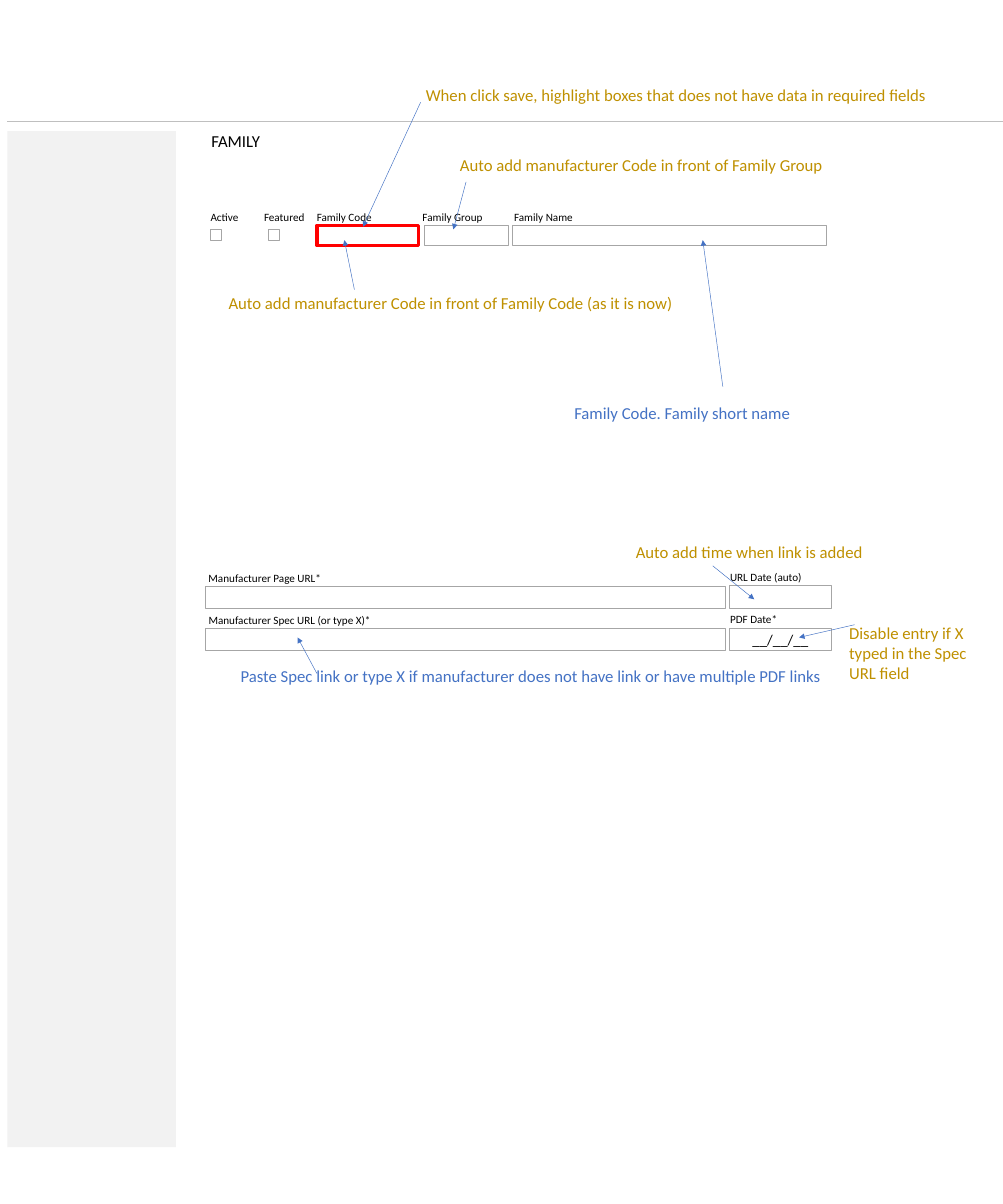
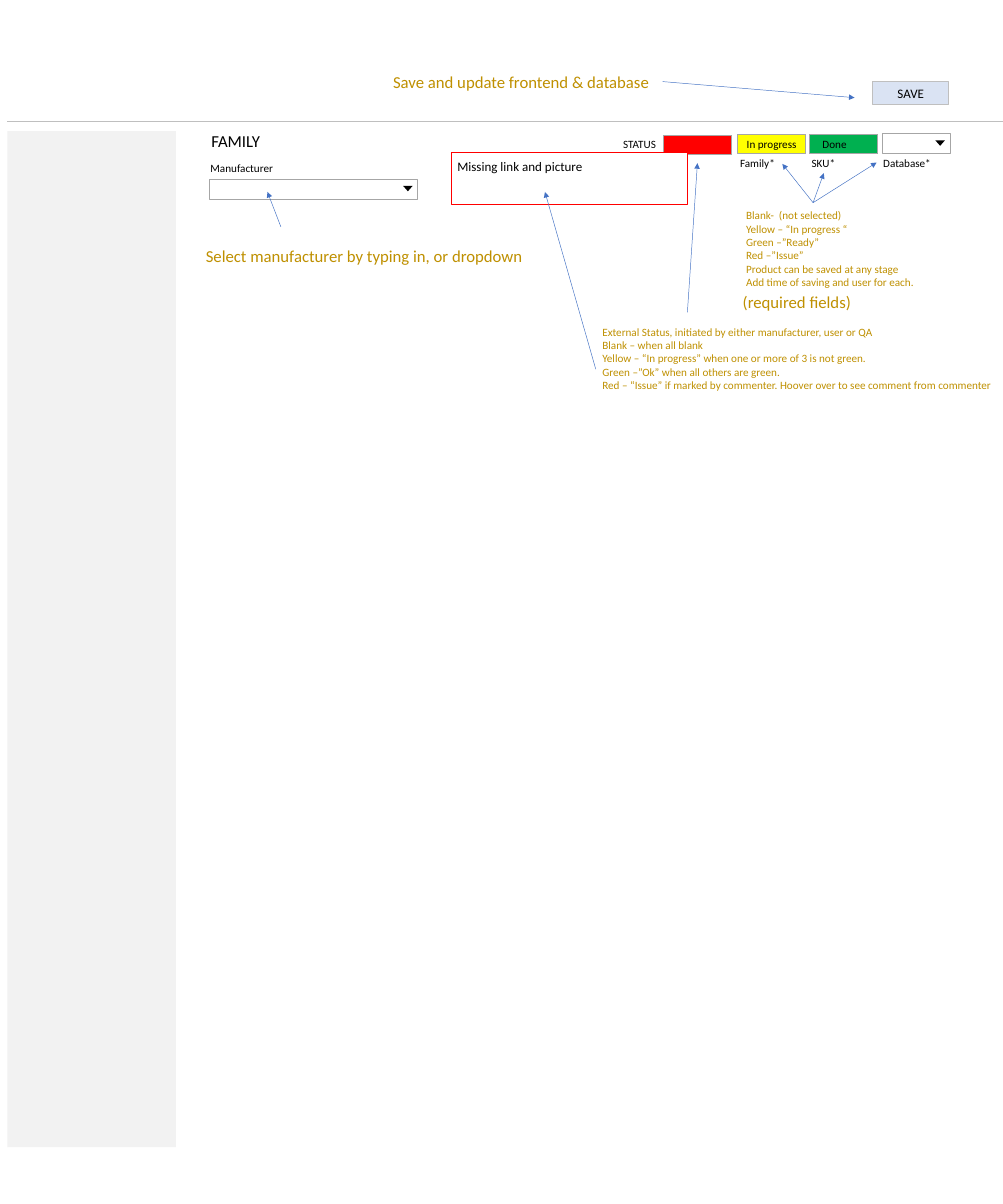
from dataclasses import dataclass
from typing import Any

from pptx import Presentation
from pptx import util as u
from pptx.dml.color import RGBColor
from pptx.enum import shapes, text
from pptx.oxml.ns import qn
from lxml import etree

PX = 9144  # 100 px to the inch
FONT = "Calibri"
BLACK = RGBColor(0x00, 0x00, 0x00)
WHITE = RGBColor(0xFF, 0xFF, 0xFF)
PANEL = RGBColor(0xF2, 0xF2, 0xF2)
RULE = RGBColor(0xBF, 0xBF, 0xBF)
FIELD_LINE = RGBColor(0xA6, 0xA6, 0xA6)
NOTE = RGBColor(0xBF, 0x90, 0x00)
BLUE = RGBColor(0x44, 0x72, 0xC4)
BUTTON = RGBColor(0xDA, 0xE3, 0xF3)
RED = RGBColor(0xFF, 0x00, 0x00)
YELLOW = RGBColor(0xFF, 0xFF, 0x00)
GREEN = RGBColor(0x00, 0xB0, 0x50)


def px(*lengths):
    return [u.Emu(length * PX) for length in lengths]


def style_paragraphs(frame, size, color, align=text.PP_ALIGN.LEFT):
    for paragraph in frame.paragraphs:
        paragraph.alignment = align
        paragraph.font.name = FONT
        paragraph.font.size = u.Pt(size)
        paragraph.font.color.rgb = color


@dataclass
class Region:
    """A part of a slide; everything in it is placed from its left top corner."""
    slide: Any
    left: int
    top: int

    def text(self, words, x, y, w, h=30, size=12, color=BLACK, wrap=False):
        area = self.slide.shapes.add_textbox(*px(self.left + x, self.top + y, w, h))
        frame = area.text_frame
        frame.word_wrap = wrap
        frame.text = words
        style_paragraphs(frame, size, color)

    def note(self, words, x, y, w, h=40, size=18, color=NOTE, wrap=False):
        self.text(words, x, y, w, h, size, color, wrap)

    def box(self, x, y, w, h, fill=None, line=FIELD_LINE, weight=1,
            kind=shapes.MSO_SHAPE.RECTANGLE):
        shape = self.slide.shapes.add_shape(
            kind, *px(self.left + x, self.top + y, w, h))
        shape.shadow.inherit = False
        if fill is None:
            shape.fill.background()
        else:
            shape.fill.solid()
            shape.fill.fore_color.rgb = fill
        if line is None:
            shape.line.fill.background()
        else:
            shape.line.color.rgb = line
            shape.line.width = u.Pt(weight)
        return shape

    def dropdown(self, x, y, w, h):
        self.box(x, y, w, h)
        marker = self.box(x + w - 22, y + 10, 14, 8, BLACK, None,
                          kind=shapes.MSO_SHAPE.ISOSCELES_TRIANGLE)
        marker.rotation = 180

    def line(self, x1, y1, x2, y2, color=BLUE, arrow=True):
        connector = self.slide.shapes.add_connector(
            shapes.MSO_CONNECTOR.STRAIGHT,
            *px(self.left + x1, self.top + y1, self.left + x2, self.top + y2))
        connector.line.color.rgb = color
        connector.line.width = u.Pt(0.5)
        if arrow:
            etree.SubElement(connector.line._get_or_add_ln(),
                             qn("a:tailEnd"), type="triangle")
        etree.SubElement(connector._element.spPr, qn("a:effectLst"))


def write_in(shape, words, size, align=text.PP_ALIGN.CENTER, inset=0):
    frame = shape.text_frame
    frame.margin_left, frame.margin_right, frame.margin_top, frame.margin_bottom = \
        px(inset, 0, 0, 0)
    frame.vertical_anchor = text.MSO_ANCHOR.MIDDLE
    frame.text = words
    style_paragraphs(frame, size, BLACK, align)


def add_page(prs):
    """Side panel, top rule and title, shared by all slides."""
    slide = prs.slides.add_slide(prs.slide_layouts[5])
    page = Region(slide, 11, 181)
    page.box(0, 15, 252, 1519, PANEL, None)
    page.line(0, 0, 1489, 0, RULE, arrow=False)

    title = slide.shapes.title
    title.left, title.top, title.width, title.height = px(306, 191, 94, 40)
    frame = title.text_frame
    frame.text = "FAMILY"
    frame.word_wrap = False
    frame.auto_size = text.MSO_AUTO_SIZE.NONE
    frame.vertical_anchor = text.MSO_ANCHOR.TOP
    style_paragraphs(frame, 18, BLACK)
    return slide


def family_fields(slide, left, top):
    form = Region(slide, left, top)
    # Captions and entry fields
    for caption, x, w in [("Active", 5, 62), ("Featured", 85, 81),
                          ("Family Code", 164, 103), ("Family Group", 322, 111),
                          ("Family Name", 459, 109)]:
        form.text(caption, x, 0, w)
    for x in (15, 101):
        form.box(x, 34, 17, 16)
    form.box(174, 28, 152, 30, line=RED, weight=4)
    for x, w in [(335, 125), (466, 470)]:
        form.box(x, 28, w, 30)

    # Remarks
    form.note("When click save, highlight boxes that does not have data in required fields",
              327, -187, 778)
    form.line(329, -156, 243, 30)
    form.note("Auto add manufacturer Code in front of Family Group", 378, -82, 583)
    form.line(397, -37, 378, 34)
    form.note("Auto add manufacturer Code in front of Family Code (as it is now)",
              32, 124, 693, 71)
    form.line(230, 124, 215, 50)
    form.note("Family Code. Family short name", 549, 289, 346, color=BLUE)
    form.line(781, 269, 751, 50)


def link_fields(slide, left, top):
    form = Region(slide, left, top)
    # Link and date entry rows
    rows = [("Manufacturer Page URL*", 190, "URL Date (auto)", 128, ""),
            ("Manufacturer Spec URL (or type X)*", 265, "PDF Date*", 91, "__/__/__")]
    for row, (link, link_w, date, date_w, pattern) in enumerate(rows):
        y = row * 63
        form.text(link, -6, y - 28, link_w)
        form.box(0, y, 777, 33)
        form.text(date, 774, y - 29, date_w)
        date_field = form.box(783, y - 1, 152, 34)
        if pattern:
            write_in(date_field, pattern, 16)

    # Remarks
    form.note("Auto add time when link is added", 633, -72, 364, 71)
    form.line(758, -31, 820, 19)
    form.note("Disable entry if X typed in the Spec URL field", 952, 49, 211, 131, wrap=True)
    form.line(970, 57, 887, 76)
    form.note("Paste Spec link or type X if manufacturer does not have link "
              "or have multiple PDF links", 42, 114, 893, color=BLUE)
    form.line(166, 130, 137, 76)


def manufacturer_picker(slide, left, top):
    picker = Region(slide, left, top)
    picker.text("Manufacturer", -8, -31, 114)
    picker.dropdown(0, 0, 312, 30)
    picker.note("Select manufacturer by typing in, or dropdown", -15, 94, 500, 71)
    picker.line(107, 71, 87, 19)


def save_button(slide, left, top):
    bar = Region(slide, left, top)
    write_in(bar.box(0, 0, 114, 34, BUTTON, RULE, 0.75), "SAVE", 14)
    bar.note("Save and update frontend & database", -727, -19, 408, 71)
    bar.line(-314, 0, -27, 24)


def status_bar(slide, left, top):
    bar = Region(slide, left, top)
    field_w, field_h, pitch, first = 102, 29, 108, 111
    # Overall status
    bar.text("STATUS", -70, -1, 70)
    bar.box(0, 1, field_w, field_h, RED)

    # One status per stage
    write_in(bar.box(first, 0, field_w, field_h, YELLOW), "In progress", 12)
    write_in(bar.box(first + pitch, 0, field_w, field_h, GREEN), "Done", 12,
             text.PP_ALIGN.LEFT, 19)
    bar.dropdown(first + 2 * pitch, -1, field_w, field_h)
    for stage, (caption, w) in enumerate([("Family*", 73), ("SKU*", 56), ("Database*", 92)]):
        bar.text(caption, first - 6 + stage * (pitch - 1), 28, w)

    # Stage remarks
    bar.note("Blank-  (not selected)\nYellow – “In progress “\nGreen –”Ready”\n"
             "Red –”Issue”\nProduct can be saved at any stage\n"
             "Add time of saving and user for each.",
             114, 106, 341, 162, size=12, wrap=True)
    bar.note("(required fields)", 109, 231, 184)
    for x, y in [(178, 44), (240, 58), (319, 42)]:
        bar.line(224, 102, x, y)

    # Overall status remarks
    bar.line(36, 266, 51, 43)
    bar.note("External Status, initiated by either manufacturer, user or QA\n"
             "Blank – when all blank\n"
             "Yellow – “In progress” when one or more of 3 is not green.\n"
             "Green –”Ok” when all others are green.\n"
             "Red – “Issue” if marked by commenter. Hoover over to see comment from commenter",
             -101, 280, 609, 141, size=12)

    # Comment popup
    bar.box(-317, 27, 353, 78, WHITE, RED)
    bar.text("Missing link and picture", -318, 31, 209, 34, 14)
    bar.line(-101, 351, -177, 86)


def main():
    prs = Presentation()
    prs.slide_width, prs.slide_height = px(1500, 1800)

    entry = add_page(prs)
    family_fields(entry, 300, 309)
    link_fields(entry, 308, 877)

    status = add_page(prs)
    manufacturer_picker(status, 313, 268)
    save_button(status, 1305, 122)
    status_bar(status, 992, 201)

    prs.save("out.pptx")


if __name__ == "__main__":
    main()
